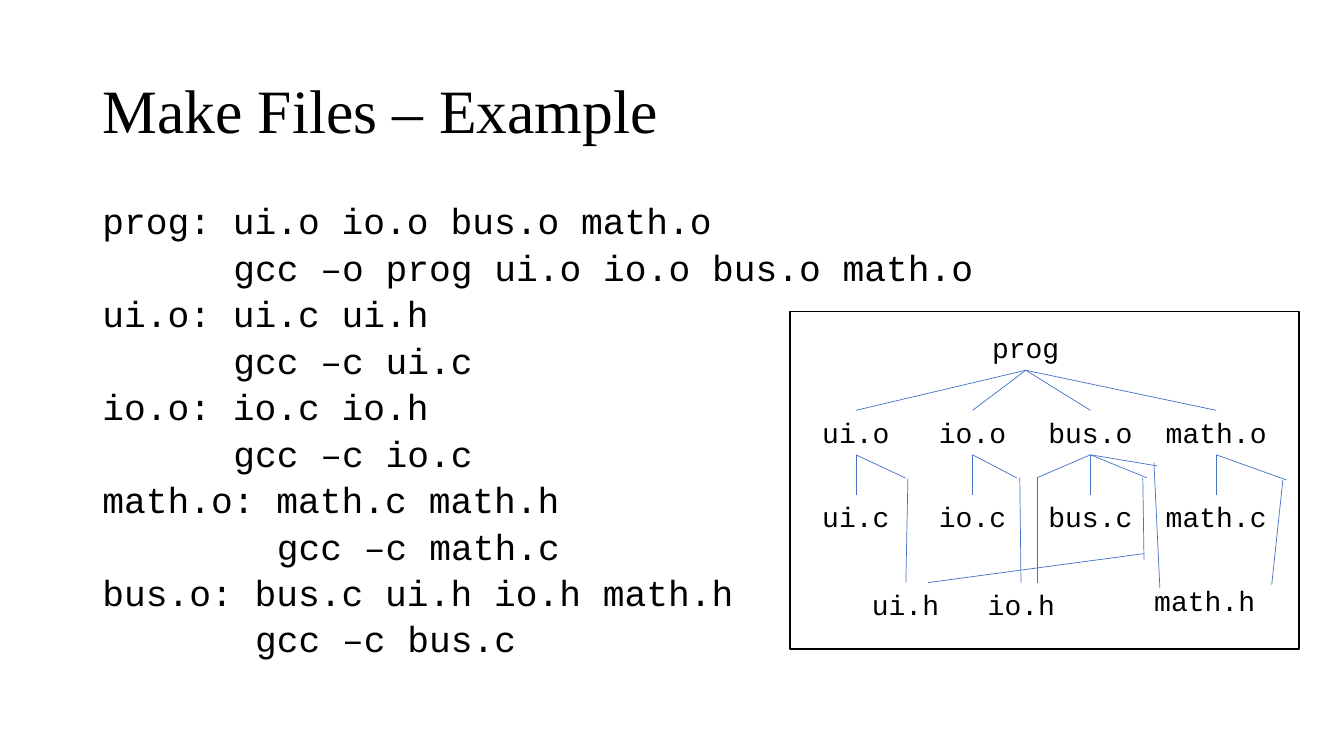
from pptx import Presentation
from pptx.dml.color import RGBColor
from pptx.enum.shapes import MSO_CONNECTOR, MSO_SHAPE
from pptx.enum.text import MSO_ANCHOR, PP_ALIGN
from pptx.util import Cm, Pt
from lxml import etree

BLACK = RGBColor(0, 0, 0)
WHITE = RGBColor(255, 255, 255)
BLUE = RGBColor(0x44, 0x72, 0xC4)
LINE = MSO_CONNECTOR.STRAIGHT
RECT = MSO_SHAPE.RECTANGLE
MIDDLE = MSO_ANCHOR.MIDDLE
CENTER = PP_ALIGN.CENTER
SERIF = "Times New Roman"
MONO = "Courier New"
DRAW = "http://schemas.openxmlformats.org/drawingml/2006/main"
CHAR = 0.55
HIGH = 1.12

RULES = [
    ("prog: ui.o io.o bus.o math.o", "gcc –o prog ui.o io.o bus.o math.o"),
    ("ui.o: ui.c ui.h", "gcc –c ui.c"),
    ("io.o: io.c io.h", "gcc –c io.c"),
    ("math.o: math.c math.h", "gcc –c math.c"),
    ("bus.o: bus.c ui.h io.h math.h", "gcc –c bus.c"),
]
ROOT = (5.94, 0.36)
OBJ_Y, SRC_Y, HEAD_Y = 2.49, 4.62, 6.83
UNITS = {"ui": (1.66, 2.31), "io": (4.6, 2.24), "bus": (7.57, 2.69), "math": (10.74, 3.38)}
HEADS = [("ui.h", 2.91, HEAD_Y, 2.31), ("io.h", 5.83, HEAD_Y, 2.31), ("math.h", 10.45, 6.73, 3.38)]
BENDS = [("ui", 2.9, 4.19), ("io", 5.71, 4.19), ("bus", 6.22, 4.19),
         ("bus", 8.99, 4.19), ("bus", 9.25, 3.89), ("math", 12.5, 4.24)]
DROPS = [(2.97, 4.19, 2.92, HEAD_Y), (5.79, 4.19, 5.82, HEAD_Y), (6.22, 4.19, 6.22, HEAD_Y),
         (8.89, 4.19, 8.92, 6.25), (8.92, 6.1, 3.48, HEAD_Y),
         (9.17, 3.81, 9.32, 6.96), (12.42, 4.24, 12.14, 6.88)]


def style(para, text, size, name):
    """Fill a paragraph with text in one font."""
    para.text = text
    para.font.size = Pt(size)
    para.font.name = name
    para.font.color.rgb = BLACK


def frame(slide, x, y, w, h):
    """Add a wrapping text box and return its text frame."""
    text = slide.shapes.add_textbox(Cm(x), Cm(y), Cm(w), Cm(h)).text_frame
    text.word_wrap = True
    return text


def title(slide, x, y, w, h):
    """Place the slide title in the given box."""
    text = frame(slide, x, y, w, h)
    text.vertical_anchor = MIDDLE
    para = text.paragraphs[0]
    para.line_spacing = 0.9
    style(para, "Make Files – Example", 44, SERIF)


def code(slide, x, y, w, h):
    """Place the make rules, each command indented past its target."""
    text = frame(slide, x, y, w, h)
    para = text.paragraphs[0]
    for rule, command in RULES:
        indent = (rule.index(":") + 2) * CHAR
        if rule.startswith("prog"):
            indent = 6 * CHAR
        for line, left in ((rule, 0), (command, indent)):
            if para is None:
                para = text.add_paragraph()
            style(para, line, 25.9, MONO)
            para.line_spacing = 0.81
            para.space_before = Pt(8)
            props = para._p.get_or_add_pPr()
            props.set("marL", str(Cm(left)))
            props.set("indent", "0")
            para = None


def tree(slide, x, y, w, h):
    """Draw the framed dependency tree in the given box."""
    panel = slide.shapes.add_shape(RECT, Cm(x), Cm(y), Cm(w), Cm(h))
    panel.shadow.inherit = False
    panel.fill.solid()
    panel.fill.fore_color.rgb = WHITE
    panel.line.color.rgb = BLACK
    panel.line.width = Pt(1)

    def node(name, mid, top, wide):
        """Add a label centred on mid."""
        text = frame(slide, x + mid - wide / 2, y + top, wide, HIGH)
        para = text.paragraphs[0]
        para.alignment = CENTER
        style(para, name, 20, MONO)

    def link(x1, y1, x2, y2):
        """Add a thin line between two points of the box."""
        line = slide.shapes.add_connector(LINE, Cm(x + x1), Cm(y + y1), Cm(x + x2), Cm(y + y2))
        line.line.color.rgb = BLUE
        line.line.width = Pt(0.5)
        etree.SubElement(line._element.spPr, f"{{{DRAW}}}effectLst")

    mid, top = ROOT
    base = OBJ_Y + HIGH
    node("prog", mid, top, 2.69)
    for name, (pos, wide) in UNITS.items():
        node(name + ".o", pos, OBJ_Y, wide)
        node(name + ".c", pos, SRC_Y, wide)
        link(mid, top + HIGH, pos, OBJ_Y)
        link(pos, base, pos, SRC_Y)
    for head in HEADS:
        node(*head)
    for name, end, low in BENDS:
        link(UNITS[name][0], base, end, low)
    for drop in DROPS:
        link(*drop)


def main():
    """Build and save the slide."""
    deck = Presentation()
    deck.slide_width = Cm(33.87)
    deck.slide_height = Cm(19.05)
    slide = deck.slides.add_slide(deck.slide_layouts[6])
    title(slide, 2.33, 1.01, 29.21, 3.68)
    code(slide, 2.33, 5.08, 22.99, 12.09)
    tree(slide, 19.91, 7.85, 12.83, 8.51)
    deck.save("out.pptx")


if __name__ == "__main__":
    main()
